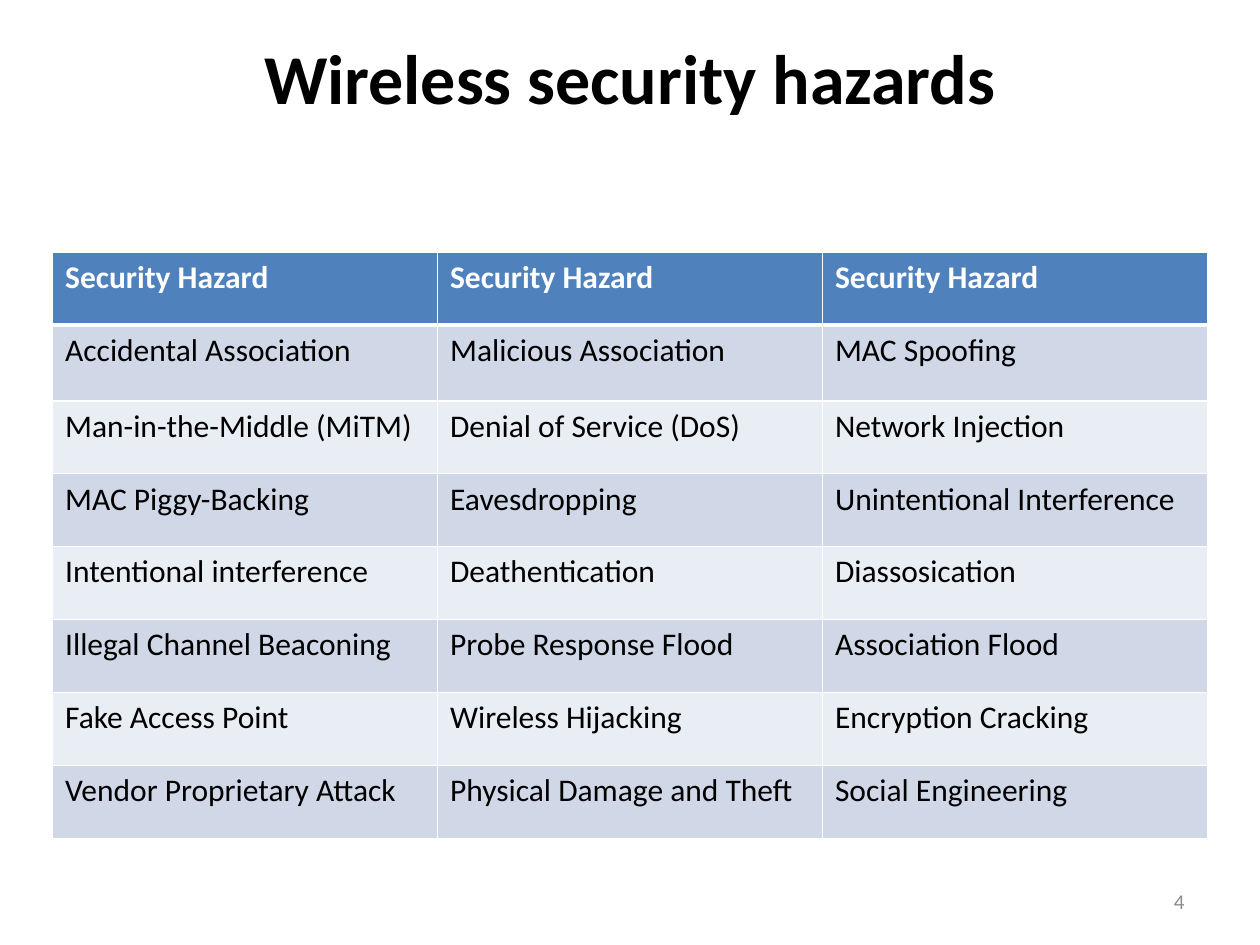
from lxml import etree
from pptx import Presentation
from pptx.dml.color import RGBColor
from pptx.enum.text import MSO_ANCHOR, PP_ALIGN
from pptx.oxml.ns import qn
from pptx.util import Cm, Pt

CENTER, RIGHT, JUSTIFY = PP_ALIGN.CENTER, PP_ALIGN.RIGHT, PP_ALIGN.JUSTIFY
MIDDLE = MSO_ANCHOR.MIDDLE
BLANK_LAYOUT = 6

HAZARDS = [
    ("Security Hazard", "Security Hazard", "Security Hazard"),
    ("Accidental Association", "Malicious Association", "MAC Spoofing"),
    ("Man-in-the-Middle (MiTM)", "Denial of Service (DoS)", "Network Injection"),
    ("MAC Piggy-Backing", "Eavesdropping", "Unintentional Interference"),
    ("Intentional interference", "Deathentication", "Diassosication"),
    ("Illegal Channel Beaconing", "Probe Response Flood", "Association Flood"),
    ("Fake Access Point", "Wireless Hijacking", "Encryption Cracking"),
    ("Vendor Proprietary Attack", "Physical Damage and Theft", "Social Engineering"),
]


def color(value):
    return RGBColor.from_string(value)


def write(frame, text, size=18, ink="000000", bold=False, align=JUSTIFY, font="Calibri"):
    para = frame.paragraphs[0]
    para.alignment = align
    span = para.add_run()
    span.text = text
    span.font.name = font
    span.font.size = Pt(size)
    span.font.bold = bold
    span.font.color.rgb = color(ink)


def set_border(cell, side, width, ink):
    line = etree.SubElement(cell._tc.get_or_add_tcPr(), qn(f"a:ln{side}"), w=str(Pt(width)))
    fill = etree.SubElement(line, qn("a:solidFill"))
    etree.SubElement(fill, qn("a:srgbClr"), val=ink)


class SlideBuilder:
    header = "4F81BD"
    bands = ("E9EDF4", "D0D8E8")
    white = "FFFFFF"
    muted = "8C8C8C"

    def __init__(self, page):
        self.page = page

    def text(self, left, top, width, height, text, **style):
        box = self.page.shapes.add_textbox(Cm(left), Cm(top), Cm(width), Cm(height))
        frame = box.text_frame
        frame.word_wrap = True
        frame.vertical_anchor = MIDDLE
        write(frame, text, **style)

    def table(self, left, top, column_width, row_heights, rows):
        columns = len(rows[0])
        table = self.page.shapes.add_table(
            len(rows), columns, Cm(left), Cm(top),
            Cm(column_width * columns), Cm(sum(row_heights))).table
        for column in table.columns:
            column.width = Cm(column_width)
        for index, (texts, height) in enumerate(zip(rows, row_heights)):
            table.rows[index].height = Cm(height)
            for cell, text in zip(table.rows[index].cells, texts):
                self.cell(cell, text, index)

    def cell(self, cell, text, row):
        is_header = row == 0
        widths = {"L": 1, "R": 1, "T": 3 if row == 1 else 1, "B": 3 if is_header else 1}
        for side, width in widths.items():
            set_border(cell, side, width, self.white)
        cell.fill.solid()
        cell.fill.fore_color.rgb = color(self.header if is_header else self.bands[row % 2])
        write(cell.text_frame, text, bold=is_header,
              ink=self.white if is_header else "000000")


def main():
    deck = Presentation()
    deck.slide_width, deck.slide_height = Cm(25.4), Cm(19.05)
    slide = SlideBuilder(deck.slides.add_slide(deck.slide_layouts[BLANK_LAYOUT]))
    slide.text(1.27, 0.76, 22.86, 1.58, "Wireless security hazards",
               size=40, bold=True, align=CENTER)
    slide.table(1.06, 5.08, 7.76, [1.47, 1.53] + [1.47] * 6, HAZARDS)
    slide.text(18.2, 17.66, 5.93, 1.01, "4", size=12, ink=slide.muted, align=RIGHT)
    deck.save("out.pptx")


if __name__ == "__main__":
    main()
